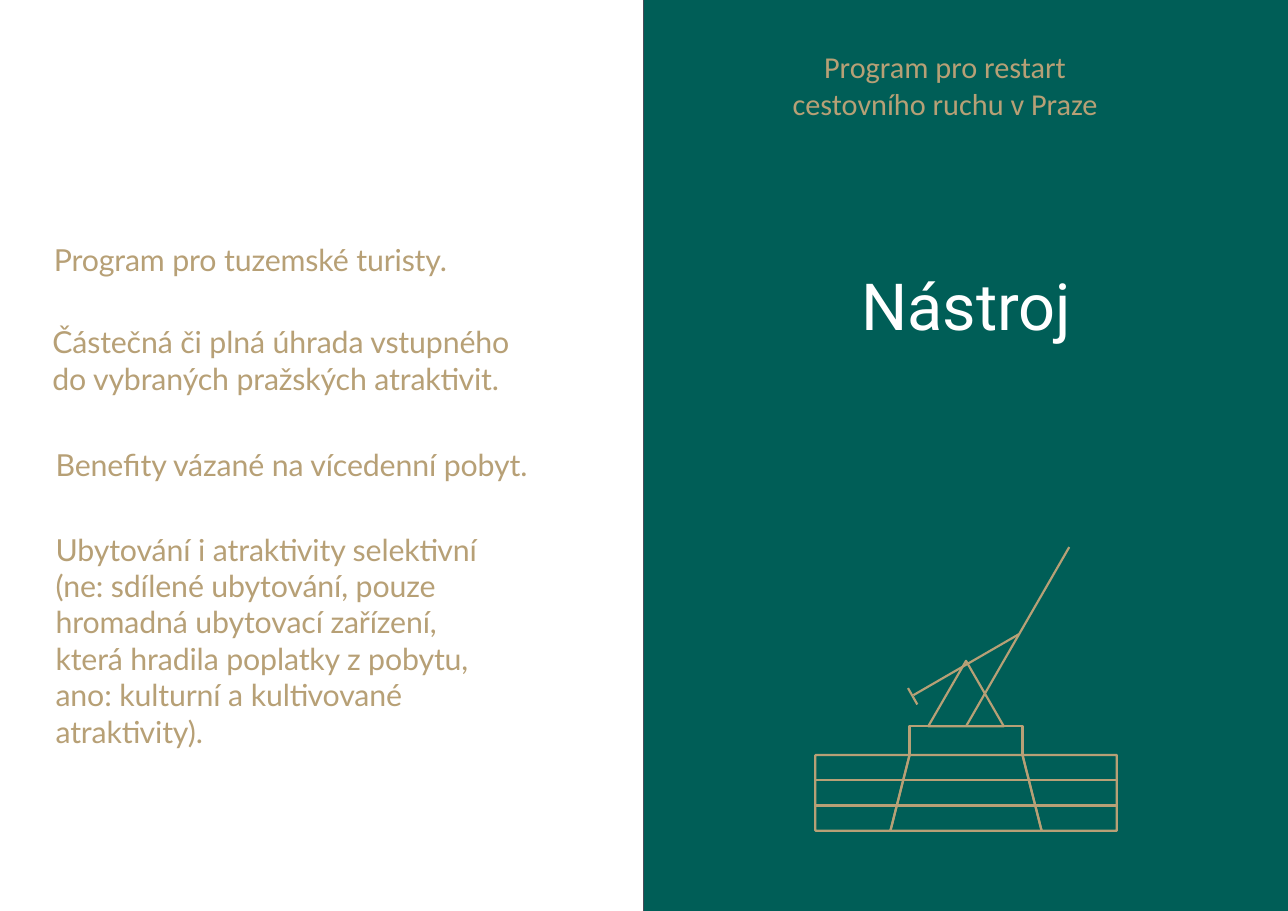
from collections import namedtuple
from dataclasses import dataclass

from pptx import Presentation
from pptx import util as u
from pptx.dml.color import RGBColor
from pptx.enum import shapes, text
from pptx.oxml import ns
from lxml import etree

Box = namedtuple("Box", "left top width height")


@dataclass(frozen=True)
class Theme:
    green: RGBColor = RGBColor.from_string("005E57")
    gold: RGBColor = RGBColor.from_string("B7A076")
    white: RGBColor = RGBColor.from_string("FFFFFF")
    slate: RGBColor = RGBColor.from_string("484B58")
    title_size: float = 60
    body_size: float = 28
    title_font: str = "Roboto"
    heading_font: str = "Calibri"
    body_font: str = "Lato"
    stroke: float = 2
    divider: float = 1


THEME = Theme()
PAGE = Box(0, 0, 1190.5, 841.9)
FOLD = 594.72

STATEMENTS = [
    (Box(46.8, 221.76, 482.4, 35.28), 3, 0, "Program pro tuzemské turisty."),
    (Box(45.36, 298.08, 482.4, 69.12), 3, 40,
     "Částečná či plná úhrada vstupného do vybraných pražských atraktivit."),
    (Box(50.4, 411.4, 460.8, 35.28), 1, 0, "Benefity vázané na vícedenní pobyt."),
    (Box(50.4, 489.6, 398.16, 170.64), 1, 0,
     "Ubytování i atraktivity selektivní (ne: sdílené ubytování, pouze "
     "hromadná ubytovací zařízení, která hradila poplatky z pobytu, "
     "ano: kulturní a kultivované atraktivity)."),
]


def place(shape, box):
    shape.left, shape.top, shape.width, shape.height = (u.Pt(v) for v in box)


def set_frame(frame, top, left=0, right=0):
    frame.word_wrap = True
    frame.auto_size = text.MSO_AUTO_SIZE.SHAPE_TO_FIT_TEXT
    frame.vertical_anchor = text.MSO_ANCHOR.TOP
    frame.margin_left, frame.margin_right = u.Pt(left), u.Pt(right)
    frame.margin_top, frame.margin_bottom = u.Pt(top), 0


def add_span(para, words, font, size, color):
    span = para.add_run()
    span.text = words
    span.font.name = font
    span.font.size = u.Pt(size)
    span.font.color.rgb = color
    return span


def outline(shape):
    shape.shadow.inherit = False
    shape.fill.background()
    shape.line.color.rgb = THEME.gold
    shape.line.width = u.Pt(THEME.stroke)


def add_line(page, start, end, color, width):
    line = page.shapes.add_connector(
        shapes.MSO_CONNECTOR.STRAIGHT, *(u.Pt(v) for v in (*start, *end)))
    line.line.color.rgb = color
    line.line.width = u.Pt(width)
    etree.SubElement(line.element.spPr, ns.qn("a:effectLst"))
    return line


def add_outline(page, points):
    first, *rest = [(u.Pt(x), u.Pt(y)) for x, y in points]
    builder = page.shapes.build_freeform(*first)
    builder.add_line_segments(rest, close=True)
    outline(builder.convert_to_shape())


def add_statements(page, box):
    for area, indent, right, words in STATEMENTS:
        note = page.shapes.add_textbox(0, 0, 0, 0)
        place(note, area._replace(left=box.left + area.left, top=box.top + area.top))
        set_frame(note.text_frame, 1, indent, right)
        para = note.text_frame.paragraphs[0]
        para.space_before = u.Pt(1)
        span = add_span(para, words, THEME.body_font, THEME.body_size, THEME.gold)
        span.font._element.set("spc", "-10")


def add_cover(page, box):
    panel = page.shapes.add_shape(shapes.MSO_SHAPE.RECTANGLE, 0, 0, 0, 0)
    place(panel, box)
    panel.shadow.inherit = False
    panel.fill.solid()
    panel.fill.fore_color.rgb = THEME.green
    panel.line.fill.background()
    title = page.shapes.title
    title.element.addprevious(panel.element)
    add_line(page, (box.left, box.top + box.height), (box.left, box.top),
             THEME.slate, THEME.divider)

    place(title, Box(box.left + 176.4, box.top + 242.64, 244.08, 75.6))
    set_frame(title.text_frame, 5)
    para = title.text_frame.paragraphs[0]
    para.alignment = text.PP_ALIGN.CENTER
    para.line_spacing = u.Pt(70)
    para.space_before = u.Pt(5)
    add_span(para, "Nástroj", THEME.title_font, THEME.title_size, THEME.white)

    heading = page.shapes.add_textbox(0, 0, 0, 0)
    place(heading, Box(box.left + 66.96, box.top + 43.2, 429.84, 69.84))
    frame = heading.text_frame
    set_frame(frame, 1)
    for index, words in enumerate(("Program pro restart ", "cestovního ruchu v Praze ")):
        para = frame.add_paragraph() if index else frame.paragraphs[0]
        para.alignment = text.PP_ALIGN.CENTER
        para.space_before = u.Pt(1)
        add_span(para, words, THEME.heading_font, THEME.body_size, THEME.gold)


def add_metronome(page, box):
    center = box.left + box.width / 2
    bottom = box.top + box.height
    plinth_top, base_top = box.top + 165.6, box.top + 192.24
    base, foot, neck, stand = box.width / 2, 69.84, 52.2, 34.92

    add_outline(page, [(center + neck, base_top), (center - neck, base_top),
                       (center - foot, bottom), (center + foot, bottom)])
    add_outline(page, [(center, box.top + 105.12), (center - stand, plinth_top),
                       (center + stand, plinth_top)])
    plinth = page.shapes.add_shape(shapes.MSO_SHAPE.RECTANGLE, 0, 0, 0, 0)
    place(plinth, Box(center - neck, plinth_top, 2 * neck, base_top - plinth_top))
    outline(plinth)
    for side in (-1, 1):
        add_outline(page, [(center + side * base, base_top), (center + side * neck, base_top),
                           (center + side * foot, bottom), (center + side * base, bottom)])

    def stroke(start, end):
        return add_line(page, start, end, THEME.gold, THEME.stroke)

    rod = stroke((center, plinth_top), (center + 95.4, box.top))
    rod.begin_connect(plinth, 0)
    stroke((center + 48.6, box.top + 80.64), (center - 48.6, box.top + 136.8))
    stroke((center - 53.64, box.top + 130.32), (center - 45, box.top + 145.44))
    for course in (1, 2):
        level = base_top + course * (bottom - base_top) / 3
        stroke((box.left, level), (box.left + box.width, level))


def main():
    deck = Presentation()
    deck.slide_width, deck.slide_height = u.Pt(PAGE.width), u.Pt(PAGE.height)
    page = deck.slides.add_slide(deck.slide_layouts.get_by_name("Title Only"))
    add_cover(page, Box(FOLD, 0, PAGE.width - FOLD, PAGE.height))
    add_metronome(page, Box(753.6, 505.6, 278.64, 262.08))
    add_statements(page, Box(0, 0, FOLD, PAGE.height))
    deck.save("out.pptx")


if __name__ == "__main__":
    main()
